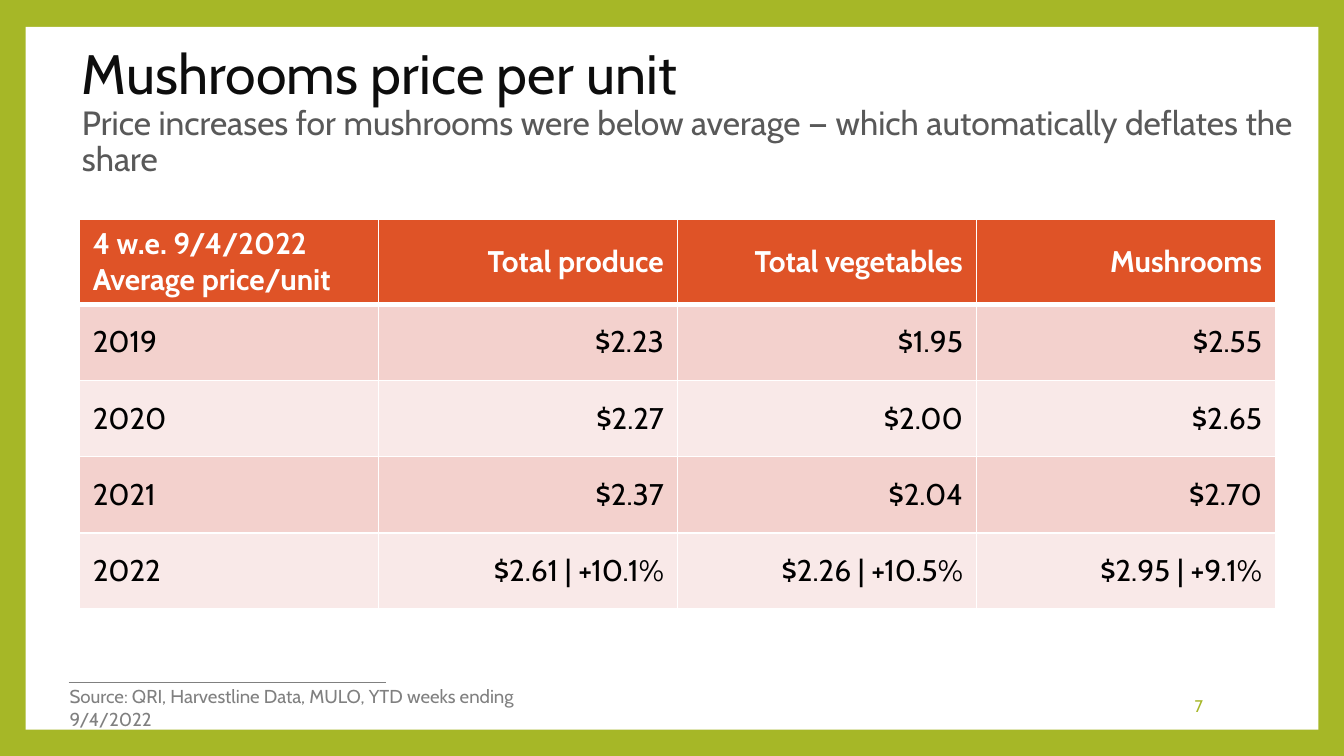
from dataclasses import dataclass

from lxml.etree import SubElement
from pptx import Presentation
from pptx.dml.color import RGBColor as RGB
from pptx.enum.shapes import MSO_CONNECTOR as Connector, MSO_SHAPE as Shape
from pptx.enum.text import MSO_ANCHOR as Anchor, MSO_AUTO_SIZE as AutoSize, PP_ALIGN as Align
from pptx.oxml.ns import qn
from pptx.slide import Slide
from pptx.table import _Cell as Cell
from pptx.text.text import Font
from pptx.util import Inches, Pt


@dataclass(frozen=True)
class Theme:
    font: str = "Cabin"
    green: str = "A6B727"
    white: str = "FFFFFF"
    black: str = "000000"
    title: str = "0D0D0D"
    subtitle: str = "595959"
    grey: str = "808080"
    header: str = "DF5327"
    bands: tuple[str, str] = ("F3D1CD", "F9E9E8")
    title_size: float = 29.7
    subtitle_size: float = 18
    table_size: float = 16
    source_size: float = 10
    number_size: float = 9


@dataclass(frozen=True)
class Box:
    left: float
    top: float
    width: float
    height: float

    def emu(self) -> tuple[int, ...]:
        return tuple(Inches(v) for v in (self.left, self.top, self.width, self.height))


@dataclass(frozen=True)
class Label:
    text: str
    box: Box
    size: float
    color: str
    align: Align = Align.LEFT
    anchor: Anchor = Anchor.TOP


THEME = Theme()
ROWS = (
    ("4 w.e. 9/4/2022\nAverage price/unit", "Total produce", "Total vegetables", "Mushrooms"),
    ("2019", "$2.23", "$1.95", "$2.55"),
    ("2020", "$2.27", "$2.00", "$2.65"),
    ("2021", "$2.37", "$2.04", "$2.70"),
    ("2022", "$2.61 | +10.1%", "$2.26 | +10.5%", "$2.95 | +9.1%"),
)
LABELS = (
    Label("7", Box(7.65, 5.1, 1.4, 0.3), THEME.number_size, THEME.green,
          Align.RIGHT, Anchor.MIDDLE),
    Label("Source: QRI, Harvestline Data, MULO, YTD weeks ending 9/4/2022",
          Box(0.42, 5.05, 4.03, 0.27), THEME.source_size, THEME.grey),
)


def style(font: Font, size: float, color: str, bold: bool = False) -> None:
    font.name = THEME.font
    font.size = Pt(size)
    font.bold = bold
    font.color.rgb = RGB.from_string(color)


def draw_frame(s: Slide) -> None:
    fill = s.background.fill
    fill.solid()
    fill.fore_color.rgb = RGB.from_string(THEME.green)
    sp = s.shapes.add_shape(Shape.RECTANGLE, *Box(0.19, 0.2, 9.62, 5.23).emu())
    sp.shadow.inherit = False
    sp.fill.solid()
    sp.fill.fore_color.rgb = RGB.from_string(THEME.white)
    sp.line.fill.background()
    rule = s.shapes.add_connector(
        Connector.STRAIGHT, Inches(0.51), Inches(5.08), Inches(2.87), Inches(5.08))
    rule.line.color.rgb = RGB.from_string(THEME.grey)
    rule.line.width = Pt(0.79)
    SubElement(rule._element.spPr, qn("a:effectLst"))


def draw_title(s: Slide, title: str, subtitle: str) -> None:
    sp = s.shapes.title
    s.shapes._spTree.append(sp._element)
    sp.left, sp.top, sp.width, sp.height = Box(0.51, 0.57, 9.43, 0.54).emu()
    tf = sp.text_frame
    tf.auto_size = AutoSize.NONE
    tf.word_wrap = True
    tf.vertical_anchor = Anchor.MIDDLE
    p = tf.paragraphs[0]
    p.alignment = Align.LEFT
    p.line_spacing = 0.9
    p.text = f"{title}\v{subtitle}"
    style(p.runs[0].font, THEME.title_size, THEME.title)
    style(p.runs[1].font, THEME.subtitle_size, THEME.subtitle)


def draw_label(s: Slide, label: Label) -> None:
    tf = s.shapes.add_textbox(*label.box.emu()).text_frame
    tf.word_wrap = True
    tf.vertical_anchor = label.anchor
    p = tf.paragraphs[0]
    p.text = label.text
    p.alignment = label.align
    style(p.font, label.size, label.color)


def draw_borders(cell: Cell, top: float, bottom: float) -> None:
    tc_pr = cell._tc.get_or_add_tcPr()
    for side, width in (("L", 1), ("R", 1), ("T", top), ("B", bottom)):
        ln = SubElement(tc_pr, qn(f"a:ln{side}"), w=str(Pt(width)))
        fill = SubElement(ln, qn("a:solidFill"))
        SubElement(fill, qn("a:srgbClr"), val=THEME.white)


def draw_cell(cell: Cell, text: str, row: int, col: int) -> None:
    is_header = row == 0
    draw_borders(cell, 3 if row == 1 else 1, 3 if is_header else 1)
    cell.fill.solid()
    cell.fill.fore_color.rgb = RGB.from_string(
        THEME.header if is_header else THEME.bands[(row - 1) % 2])
    cell.vertical_anchor = Anchor.MIDDLE
    cell.text = text
    for p in cell.text_frame.paragraphs:
        p.alignment = Align.RIGHT if col else Align.LEFT
        style(p.font, THEME.table_size, THEME.white if is_header else THEME.black, is_header)


def draw_table(s: Slide, box: Box, header_height: float) -> None:
    table = s.shapes.add_table(len(ROWS), len(ROWS[0]), *box.emu()).table
    body_height = (box.height - header_height) / (len(ROWS) - 1)
    for row, texts in enumerate(ROWS):
        table.rows[row].height = Inches(body_height if row else header_height)
        for col, text in enumerate(texts):
            draw_cell(table.cell(row, col), text, row, col)


def main() -> None:
    prs = Presentation()
    prs.slide_width = Inches(10)
    prs.slide_height = prs.slide_width * 9 // 16
    s = prs.slides.add_slide(prs.slide_layouts[5])
    draw_frame(s)
    draw_title(s, "Mushrooms price per unit",
               "Price increases for mushrooms were below average — "
               "which automatically deflates the share")
    for label in LABELS:
        draw_label(s, label)
    draw_table(s, Box(0.59, 1.63, 8.9, 2.9), 0.63)
    prs.save("out.pptx")


if __name__ == "__main__":
    main()
